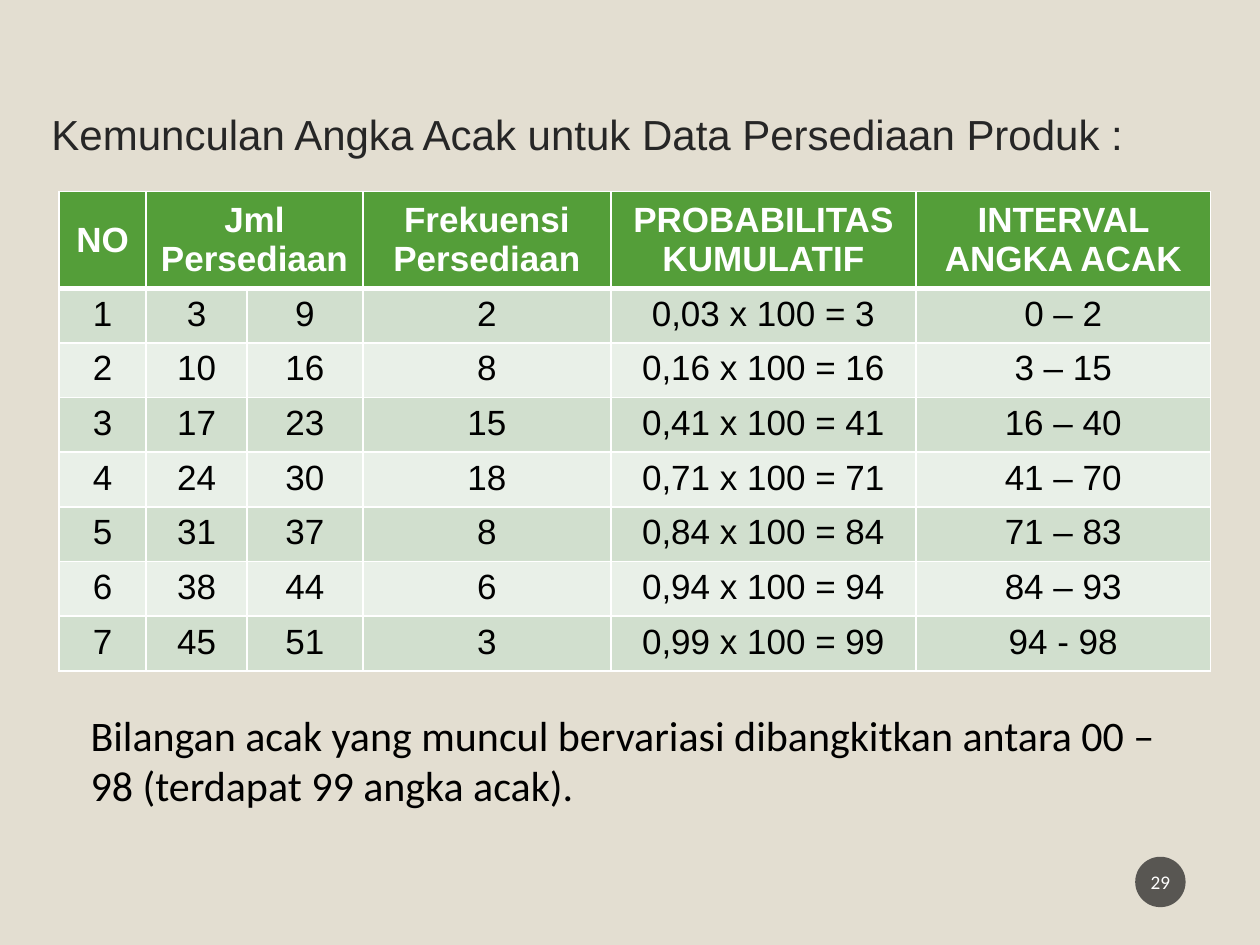
import pptx
import pptx.util
import pptx.dml.color
import pptx.enum.shapes
import pptx.enum.text
import pptx.oxml.ns
import lxml.etree

Inches, Pt = pptx.util.Inches, pptx.util.Pt
ALIGN = pptx.enum.text.PP_ALIGN
MIDDLE = pptx.enum.text.MSO_ANCHOR.MIDDLE
qn = pptx.oxml.ns.qn

COLORS = {
    "back": "E3DED1", "title": "262626", "head": "549E39",
    "odd": "D1DFCE", "even": "E9F0E8", "badge": "1D1D1D",
    "white": "FFFFFF", "black": "000000",
}


def color(name):
    return pptx.dml.color.RGBColor.from_string(COLORS[name])


def write(frame, text, size, font, tint, align=ALIGN.LEFT, bold=False):
    frame.text = text
    frame.word_wrap = True
    para = frame.paragraphs[0]
    para.alignment = align
    run = para.runs[0].font
    run.size, run.name, run.bold = Pt(size), font, bold
    run.color.rgb = color(tint)
    return para


deck = pptx.Presentation()
deck.slide_width, deck.slide_height = Inches(10), Inches(7.5)
slide = deck.slides.add_slide(deck.slide_layouts[6])
slide.background.fill.solid()
slide.background.fill.fore_color.rgb = color("back")

# Title
box = slide.shapes.add_textbox(Inches(0.31), Inches(0.81), Inches(9.69), Inches(0.53))
para = write(box.text_frame, "Kemunculan Angka Acak untuk Data Persediaan Produk :",
             24, "Arial", "title")
para.space_before = Pt(10)

# Table
rows = [
    ["NO", "Jml Persediaan", "", "Frekuensi Persediaan",
     "PROBABILITAS KUMULATIF", "INTERVAL ANGKA ACAK"],
    ["1", "3", "9", "2", "0,03 x 100 = 3", "0 – 2"],
    ["2", "10", "16", "8", "0,16 x 100 = 16", "3 – 15"],
    ["3", "17", "23", "15", "0,41 x 100 = 41", "16 – 40"],
    ["4", "24", "30", "18", "0,71 x 100 = 71", "41 – 70"],
    ["5", "31", "37", "8", "0,84 x 100 = 84", "71 – 83"],
    ["6", "38", "44", "6", "0,94 x 100 = 94", "84 – 93"],
    ["7", "45", "51", "3", "0,99 x 100 = 99", "94 - 98"],
]
widths = [0.69, 0.8, 0.92, 1.97, 2.42, 2.34]
high = 0.41
table = slide.shapes.add_table(
    len(rows), len(widths), Inches(0.47), Inches(1.52),
    Inches(sum(widths)), Inches(high * len(rows))).table
for col, width in zip(table.columns, widths):
    col.width = Inches(width)
for row in table.rows:
    row.height = Inches(high)
table.cell(0, 1).merge(table.cell(0, 2))

for r, row in enumerate(rows):
    for c, text in enumerate(row):
        cell = table.cell(r, c)
        # White borders, thicker between the header and the body
        props = cell._tc.get_or_add_tcPr()
        for side in ("lnL", "lnR", "lnT", "lnB"):
            thick = (r, side) in ((0, "lnB"), (1, "lnT"))
            line = lxml.etree.SubElement(props, qn("a:" + side), w=str(Pt(3 if thick else 1)))
            fill = lxml.etree.SubElement(line, qn("a:solidFill"))
            lxml.etree.SubElement(fill, qn("a:srgbClr"), val=COLORS["white"])
        cell.fill.solid()
        cell.fill.fore_color.rgb = color("head" if r == 0 else "odd" if r % 2 else "even")
        if r == 0:
            cell.vertical_anchor = MIDDLE
        if text:
            write(cell.text_frame, text, 20, "Arial",
                  "black" if r else "white", ALIGN.CENTER, r == 0)

# Page number badge
badge = slide.shapes.add_shape(pptx.enum.shapes.MSO_SHAPE.OVAL, Inches(9.01), Inches(6.8),
                               Inches(0.4), Inches(0.4))
badge.shadow.inherit = False
badge.line.fill.background()
badge.fill.solid()
badge.fill.fore_color.rgb = color("badge")
tone = badge._element.spPr.find(qn("a:solidFill")).find(qn("a:srgbClr"))
lxml.etree.SubElement(tone, qn("a:alpha"), val="70000")
frame = badge.text_frame
frame.margin_left = frame.margin_right = Inches(0.02)
frame.vertical_anchor = MIDDLE
write(frame, "29", 11, "Calibri", "white", ALIGN.CENTER)

# Closing note
box = slide.shapes.add_textbox(Inches(0.62), Inches(5.58), Inches(8.88), Inches(1.09))
para = write(box.text_frame,
             "Bilangan acak yang muncul bervariasi dibangkitkan antara 00 – 98 "
             "(terdapat 99 angka acak).", 24, "Calibri", "black")
para.space_before = Pt(5.8)

deck.save("out.pptx")
